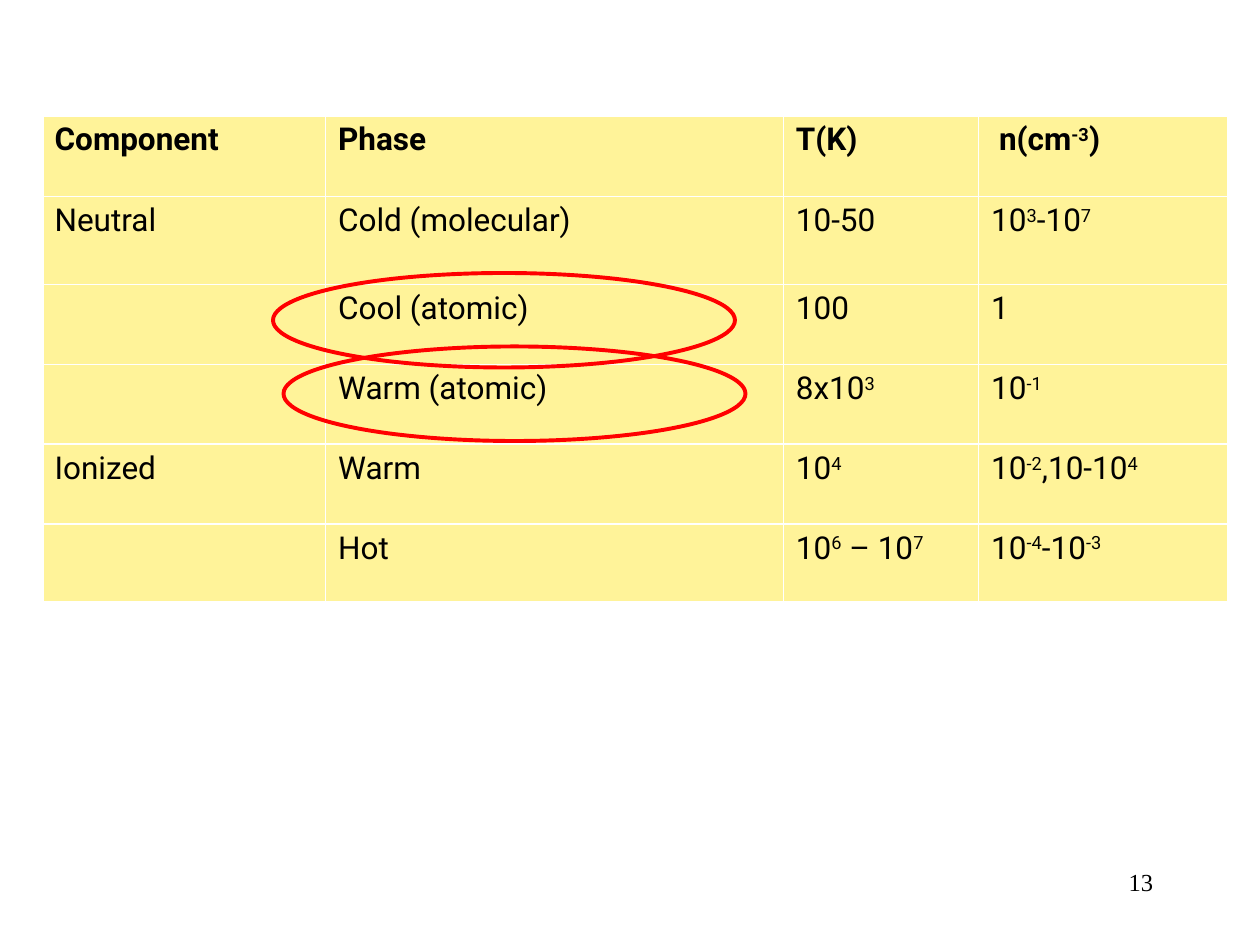
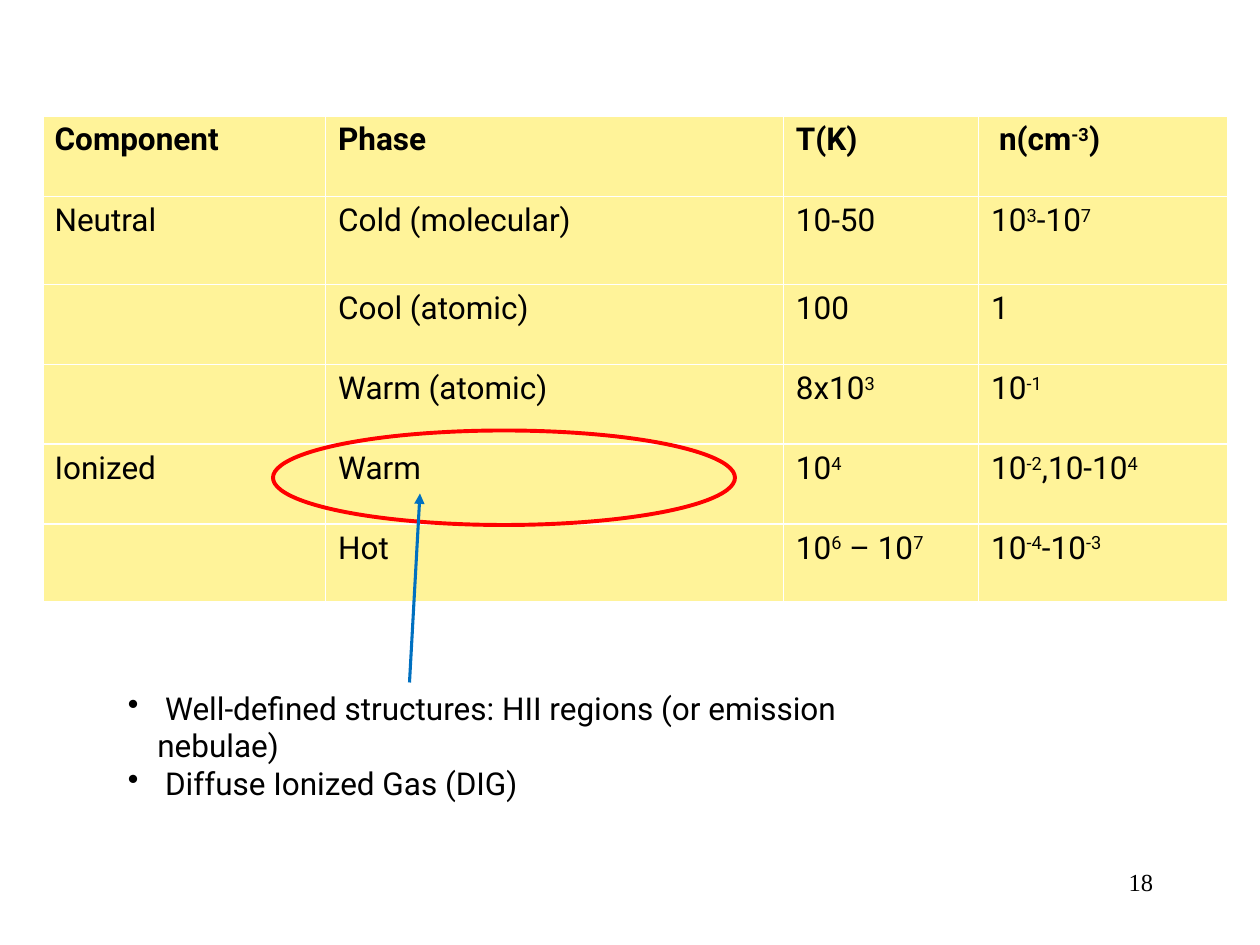
from lxml import etree
from pptx import Presentation
from pptx.dml.color import RGBColor
from pptx.enum.shapes import MSO_CONNECTOR, MSO_SHAPE
from pptx.enum.text import PP_ALIGN
from pptx.oxml.ns import qn
from pptx.util import Emu, Pt

EMU_PER_PX = 7620  # 120 px to the inch
BLANK_LAYOUT = 6
ELLIPSE = MSO_SHAPE.OVAL
STRAIGHT = MSO_CONNECTOR.STRAIGHT
RIGHT = PP_ALIGN.RIGHT

BLACK = RGBColor(0x00, 0x00, 0x00)
WHITE = RGBColor(0xFF, 0xFF, 0xFF)
YELLOW = RGBColor(0xFF, 0xF3, 0x99)
RED = RGBColor(0xFF, 0x00, 0x00)
BLUE = RGBColor(0x00, 0x70, 0xC0)

BODY_FONT = "Roboto"
NUMBER_FONT = "Times New Roman"

COLUMN_WIDTHS = [270, 436, 186, 238]
ROW_HEIGHTS = [77, 84, 76, 76, 76, 75]
# Text between a pair of carets is superscript.
PHASES = [
    ["Component", "Phase", "T(K)", " n(cm^-3^)"],
    ["Neutral", "Cold (molecular)", "10-50", "10^3^-10^7^"],
    ["", "Cool (atomic)", "100", "1"],
    ["", "Warm (atomic)", "8x10^3^", "10^-1^"],
    ["Ionized", "Warm", "10^4^", "10^-2^,10-10^4^"],
    ["", "Hot", "10^6^ – 10^7^", "10^-4^-10^-3^"],
]


def px(length):
    return Emu(length * EMU_PER_PX)


class Deck:
    def __init__(self):
        self.presentation = Presentation()
        self.presentation.slide_width = px(1200)
        self.presentation.slide_height = px(900)
        self.slide = None

    def add_slide(self):
        layout = self.presentation.slide_layouts[BLANK_LAYOUT]
        self.slide = self.presentation.slides.add_slide(layout)

    def add_text(self, paragraph, text, size=18, font=BODY_FONT, bold=False):
        """Add the text run by run, raising the parts between carets."""
        for index, part in enumerate(text.split("^")):
            if not part:
                continue
            run = paragraph.add_run()
            run.text = part
            run.font.size = Pt(size)
            run.font.name = font
            run.font.bold = bold
            run.font.color.rgb = BLACK
            if index % 2:
                run._r.get_or_add_rPr().set("baseline", "30000")

    def text_box(self, left, top, width, height):
        box = self.slide.shapes.add_textbox(px(left), px(top), px(width), px(height))
        box.text_frame.word_wrap = True
        return box.text_frame

    def cell_borders(self, cell, outer_sides):
        properties = cell._tc.get_or_add_tcPr()
        for side in "LRTB":
            width = Pt(2.25 if side in outer_sides else 1)
            line = etree.SubElement(properties, qn(f"a:ln{side}"), w=str(int(width)))
            fill = etree.SubElement(line, qn("a:solidFill"))
            etree.SubElement(fill, qn("a:srgbClr"), val=str(WHITE))

    def phase_table(self):
        last_row, last_column = len(ROW_HEIGHTS) - 1, len(COLUMN_WIDTHS) - 1
        table = self.slide.shapes.add_table(
            len(ROW_HEIGHTS), len(COLUMN_WIDTHS), px(40), px(110),
            px(sum(COLUMN_WIDTHS)), px(sum(ROW_HEIGHTS))).table
        table.first_row = table.horz_banding = False
        for column, width in zip(table.columns, COLUMN_WIDTHS):
            column.width = px(width)
        for row, height in zip(table.rows, ROW_HEIGHTS):
            row.height = px(height)
        for row, texts in enumerate(PHASES):
            for column, text in enumerate(texts):
                cell = table.cell(row, column)
                edges = {"L": column == 0, "R": column == last_column,
                         "T": row == 0, "B": row == last_row}
                self.cell_borders(cell, [side for side in edges if edges[side]])
                cell.fill.solid()
                cell.fill.fore_color.rgb = YELLOW
                self.add_text(cell.text_frame.paragraphs[0], text, bold=row == 0)

    def highlight(self, left, top):
        shape = self.slide.shapes.add_shape(ELLIPSE, px(left), px(top), px(440), px(90))
        shape.shadow.inherit = False
        shape.fill.background()
        shape.line.color.rgb = RED
        shape.line.width = Pt(2.25)

    def arrow(self, start, end):
        connector = self.slide.shapes.add_connector(STRAIGHT, *map(px, start + end))
        connector.line.color.rgb = BLUE
        connector.line.width = Pt(1.75)
        properties = connector._element.spPr
        line = properties.find(qn("a:ln"))
        etree.SubElement(line, qn("a:tailEnd"), type="triangle")
        etree.SubElement(properties, qn("a:effectLst"))

    def bullets(self, left, top, width, height, items):
        frame = self.text_box(left, top, width, height)
        for index, item in enumerate(items):
            paragraph = frame.add_paragraph() if index else frame.paragraphs[0]
            properties = paragraph._p.get_or_add_pPr()
            properties.set("marL", str(int(px(28))))
            properties.set("indent", str(int(px(-28))))
            etree.SubElement(properties, qn("a:buChar"), char="•")
            self.add_text(paragraph, item)

    def page_number(self, number):
        paragraph = self.text_box(860, 820, 250, 60).paragraphs[0]
        paragraph.alignment = RIGHT
        self.add_text(paragraph, str(number), size=14, font=NUMBER_FONT)


def atomic_phases(deck):
    deck.add_slide()
    deck.phase_table()
    deck.highlight(260, 260)
    deck.highlight(270, 330)
    deck.page_number(13)


def warm_ionized_phase(deck):
    deck.add_slide()
    deck.phase_table()
    deck.highlight(260, 410)
    deck.bullets(110, 650, 815, 85, [
        " Well-defined structures: HII regions (or emission nebulae)",
        " Diffuse Ionized Gas (DIG)",
    ])
    deck.arrow((390, 650), (400, 470))
    deck.page_number(18)


def main():
    deck = Deck()
    atomic_phases(deck)
    warm_ionized_phase(deck)
    deck.presentation.save("out.pptx")


if __name__ == "__main__":
    main()
